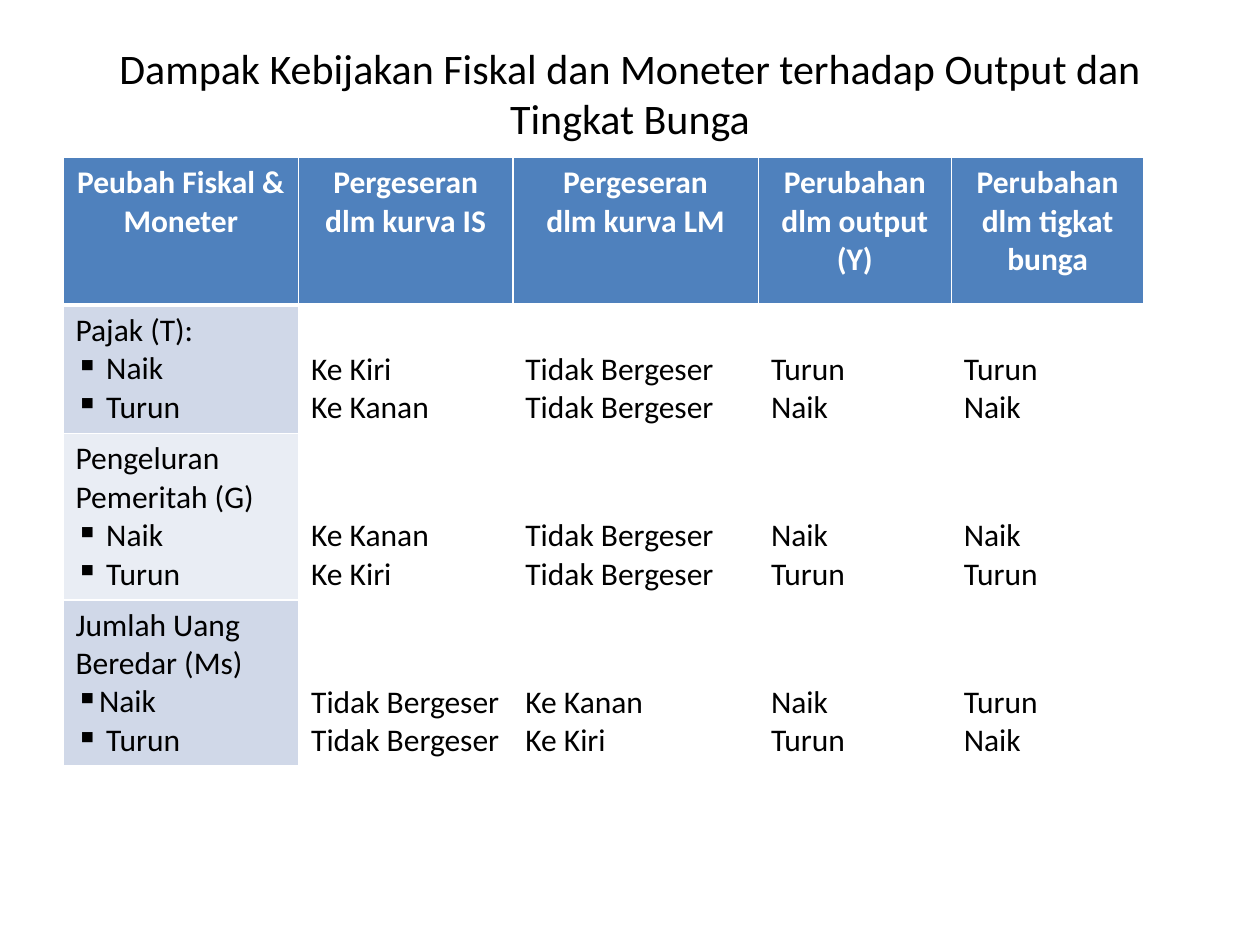
from lxml.etree import SubElement
from pptx import Presentation
from pptx.dml.color import RGBColor
from pptx.enum.text import MSO_ANCHOR as Anchor, PP_ALIGN as Align
from pptx.oxml import parse_xml
from pptx.oxml.ns import nsdecls, qn
from pptx.util import Inches, Pt

FONT = "Calibri"
BLACK = RGBColor(0x00, 0x00, 0x00)
WHITE = RGBColor(0xFF, 0xFF, 0xFF)
HEADER_BLUE = RGBColor(0x4F, 0x81, 0xBD)
BANDS = [RGBColor(0xD0, 0xD8, 0xE8), RGBColor(0xE9, 0xED, 0xF4)]

TITLE = "Dampak Kebijakan Fiskal dan Moneter terhadap Output dan Tingkat Bunga"
COLUMN_WIDTHS = [1.87, 1.7, 1.95, 1.53, 1.53]
ROW_HEIGHTS = [1.17, 1.02, 1.32, 1.32]
HEADERS = [
    ["Peubah Fiskal & Moneter"],
    ["Pergeseran dlm kurva IS"],
    ["Pergeseran", "dlm kurva LM"],
    ["Perubahan dlm output (Y)"],
    ["Perubahan dlm tigkat bunga"],
]
STAY = ["Tidak Bergeser", "Tidak Bergeser"]
LEFT_RIGHT = ["Ke Kiri", "Ke Kanan"]
RIGHT_LEFT = ["Ke Kanan", "Ke Kiri"]
UP_DOWN = ["Naik", "Turun"]
DOWN_UP = ["Turun", "Naik"]
# Each policy variable: its name and bulleted changes, then the effects
POLICIES = [
    (["Pajak (T):", " Naik", " Turun"], [LEFT_RIGHT, STAY, DOWN_UP, DOWN_UP]),
    (["Pengeluran Pemeritah (G)", " Naik", " Turun"],
     [RIGHT_LEFT, STAY, UP_DOWN, UP_DOWN]),
    (["Jumlah Uang Beredar (Ms)", "Naik", " Turun"],
     [STAY, RIGHT_LEFT, UP_DOWN, DOWN_UP]),
]


def add_run(paragraph, text, size, color, bold=False):
    run = paragraph.add_run()
    run.text = text
    run.font.name = FONT
    run.font.size = Pt(size)
    run.font.bold = bold
    run.font.color.rgb = color


def add_bullet(paragraph):
    properties = paragraph._p.get_or_add_pPr()
    properties.set("marL", "0")
    properties.set("indent", "0")
    SubElement(properties, qn("a:buChar"), char="▪")


def set_borders(cell, bottom_width):
    properties = cell._tc.get_or_add_tcPr()
    widths = {"lnL": 1, "lnR": 1, "lnT": 1, "lnB": bottom_width}
    for index, (side, width) in enumerate(widths.items()):
        properties.insert(index, parse_xml(
            f'<a:{side} {nsdecls("a")} w="{Pt(width)}"><a:solidFill>'
            f'<a:srgbClr val="{WHITE}"/></a:solidFill></a:{side}>'))


def fill_cell(cell, lines, fill=None, color=BLACK, bold=False, align=Align.LEFT,
              anchor=Anchor.TOP, bullets=False, bottom_width=1):
    if fill is None:
        cell.fill.background()
    else:
        cell.fill.solid()
        cell.fill.fore_color.rgb = fill
    set_borders(cell, bottom_width)
    cell.vertical_anchor = anchor
    frame = cell.text_frame
    for index, line in enumerate(lines):
        paragraph = frame.add_paragraph() if index else frame.paragraphs[0]
        paragraph.alignment = align
        if bullets and index:
            add_bullet(paragraph)
        add_run(paragraph, line, 18, color, bold)


def place_title(slide, left, top, width, height):
    title = slide.shapes.title
    title.left, title.top, title.width, title.height = left, top, width, height
    title.text_frame.vertical_anchor = Anchor.MIDDLE
    paragraph = title.text_frame.paragraphs[0]
    paragraph.alignment = Align.CENTER
    add_run(paragraph, TITLE, 24, BLACK)


def add_policy_table(slide, left, top, width, height):
    table = slide.shapes.add_table(
        len(ROW_HEIGHTS), len(COLUMN_WIDTHS), left, top, width, height).table
    for column, share in zip(table.columns, COLUMN_WIDTHS):
        column.width = int(width * share / sum(COLUMN_WIDTHS))
    for row, share in zip(table.rows, ROW_HEIGHTS):
        row.height = int(height * share / sum(ROW_HEIGHTS))

    # Header row
    for column, lines in enumerate(HEADERS):
        fill_cell(table.cell(0, column), lines, HEADER_BLUE, WHITE, bold=True,
                  align=Align.CENTER, bottom_width=3)

    # Policy rows: effects sit at the bottom, level with the bullets
    for row, (names, effects) in enumerate(POLICIES, start=1):
        fill_cell(table.cell(row, 0), names, BANDS[(row - 1) % 2], bullets=True)
        for column, lines in enumerate(effects, start=1):
            fill_cell(table.cell(row, column), lines, anchor=Anchor.BOTTOM)


def main():
    presentation = Presentation()
    presentation.slide_width = Inches(10)
    presentation.slide_height = Inches(7.5)
    slide = presentation.slides.add_slide(presentation.slide_layouts[5])
    place_title(slide, Inches(0.5), Inches(0.3), Inches(9), Inches(0.87))
    add_policy_table(slide, Inches(0.5), Inches(1.25),
                     Inches(sum(COLUMN_WIDTHS)), Inches(sum(ROW_HEIGHTS)))
    presentation.save("out.pptx")


if __name__ == "__main__":
    main()
